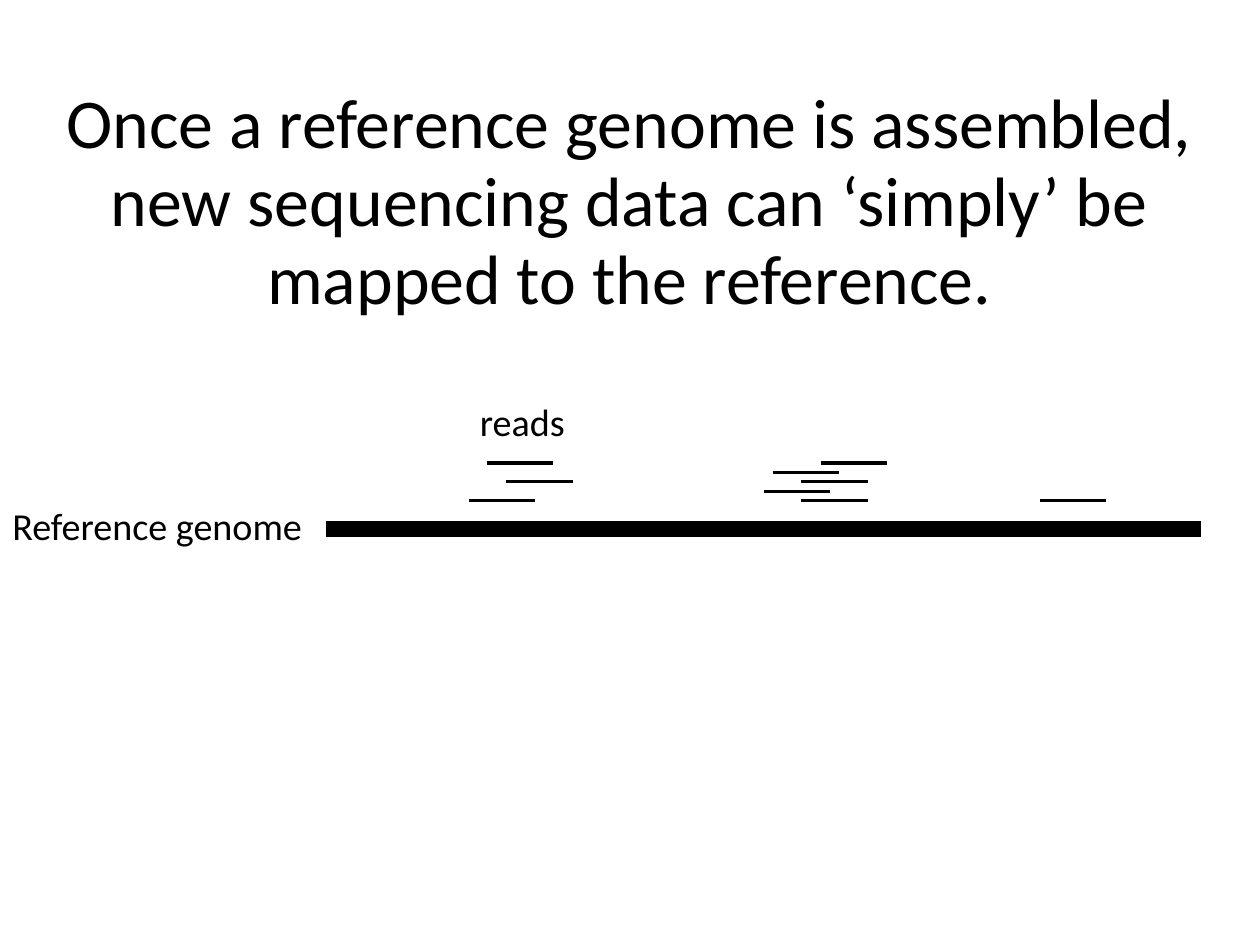
import pptx
import pptx.util
import pptx.dml.color
import pptx.enum.shapes
import pptx.enum.text
from lxml import etree

Inches, Pt = pptx.util.Inches, pptx.util.Pt
PP_ALIGN = pptx.enum.text.PP_ALIGN
MSO_ANCHOR = pptx.enum.text.MSO_ANCHOR

# Content
TITLE = ("Once a reference genome is assembled, new sequencing data "
         "can ‘simply’ be mapped to the reference.")
LABELS = [  # text, left, top, width, height
    ("reads", 4.1, 3.47, 0.95, 0.48),
    ("Reference genome", 0.01, 4.38, 2.77, 0.48),
]
READS = [  # left end, row counted down from the top read
    (4.26, 0), (4.43, 2), (4.1, 4),
    (6.76, 1), (7.01, 4), (7.18, 0), (6.68, 3), (7.01, 2),
    (9.1, 4),
]

# Layout in inches; the slide is 28 by 21 cm
CM_PER_INCH = 2.54
SLIDE_SIZE = (28 / CM_PER_INCH, 21 / CM_PER_INCH)
READ_TOP, READ_BOTTOM, READ_ROWS = 4.05, 4.38, 5
READ_PITCH = (READ_BOTTOM - READ_TOP) / (READ_ROWS - 1)
READ_LENGTH = 0.58
GENOME_LEFT, GENOME_RIGHT, GENOME_Y = 2.85, 10.51, 4.63
COLORS = {"ink": "000000", "background": "FFFFFF"}
FONT = "Calibri"


def color(name):
    return pptx.dml.color.RGBColor.from_string(COLORS[name])


def write(tf, text, size, align):
    p = tf.paragraphs[0]
    p.alignment = align
    p.line_spacing = 0.93
    r = p.add_run()
    r.text = text
    r.font.name = FONT
    r.font.size = Pt(size)
    r.font.color.rgb = color("ink")


def add_line(s, left, right, y, width):
    line = s.shapes.add_connector(
        pptx.enum.shapes.MSO_CONNECTOR.STRAIGHT,
        Inches(left), Inches(y), Inches(right), Inches(y))
    line.line.color.rgb = color("ink")
    line.line.width = Pt(width)
    etree.SubElement(line.element.spPr, pptx.oxml.ns.qn("a:effectLst"))


def main():
    prs = pptx.Presentation()
    prs.slide_width, prs.slide_height = map(Inches, SLIDE_SIZE)
    s = prs.slides.add_slide(prs.slide_layouts[5])
    s.background.fill.solid()
    s.background.fill.fore_color.rgb = color("background")

    # Title
    sp = s.shapes.title
    sp.left, sp.top = Inches(0.55), Inches(1.09)
    sp.width, sp.height = Inches(9.92), Inches(1.38)
    tf = sp.text_frame
    tf.margin_left = tf.margin_right = tf.margin_top = tf.margin_bottom = 0
    tf.vertical_anchor = MSO_ANCHOR.MIDDLE
    tf.auto_size = pptx.enum.text.MSO_AUTO_SIZE.NONE
    tf.word_wrap = True
    write(tf, TITLE, 44, PP_ALIGN.CENTER)

    # Reads stacked above the reference genome
    for left, row in READS:
        add_line(s, left, left + READ_LENGTH, READ_TOP + row * READ_PITCH, 2)
    add_line(s, GENOME_LEFT, GENOME_RIGHT, GENOME_Y, 10)

    # Labels
    for text, *box in LABELS:
        tf = s.shapes.add_textbox(*map(Inches, box)).text_frame
        tf.word_wrap = False
        tf.auto_size = pptx.enum.text.MSO_AUTO_SIZE.SHAPE_TO_FIT_TEXT
        write(tf, text, 24, PP_ALIGN.LEFT)

    prs.save("out.pptx")


if __name__ == "__main__":
    main()
